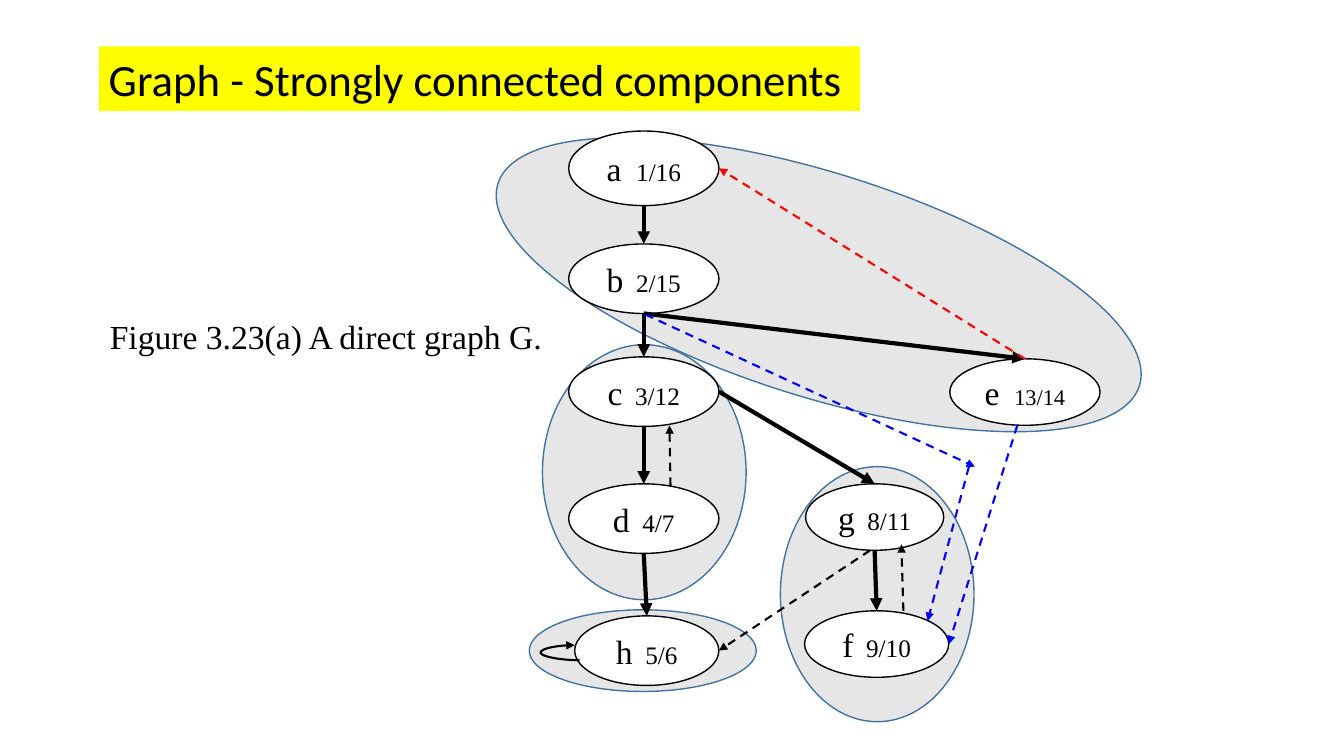
from lxml import etree
from pptx import Presentation
from pptx.dml.color import RGBColor
from pptx.enum.dml import MSO_LINE
from pptx.enum.shapes import MSO_CONNECTOR, MSO_SHAPE
from pptx.enum.text import MSO_ANCHOR, MSO_AUTO_SIZE, PP_ALIGN
from pptx.oxml.ns import qn
from pptx.util import Inches, Pt

BLACK, WHITE, BLUE, RED = "000000", "FFFFFF", "0000FF", "FF0000"
SERIF, SANS = "Times New Roman", "Calibri"


def rgb(value):
    return RGBColor.from_string(value)


class GraphSlide:
    def __init__(self, prs):
        self.s = prs.slides.add_slide(prs.slide_layouts[6])
        self.nodes = {}

    def ellipse(self, box, fill, line, rotation=0):
        sp = self.s.shapes.add_shape(MSO_SHAPE.OVAL, *map(Inches, box))
        sp.shadow.inherit = False
        sp.rotation = rotation
        sp.fill.solid()
        sp.fill.fore_color.rgb = rgb(fill)
        sp.line.color.rgb = rgb(line)
        sp.line.width = Pt(1)
        return sp

    def run(self, p, text, size, font=SERIF):
        r = p.add_run()
        r.text = text
        r.font.size = Pt(size)
        r.font.name = font
        r.font.color.rgb = rgb(BLACK)

    def node(self, name, box, runs):
        tf = self.ellipse(box, WHITE, BLACK).text_frame
        tf.vertical_anchor = MSO_ANCHOR.MIDDLE
        p = tf.paragraphs[0]
        p.alignment = PP_ALIGN.CENTER
        for text, size in runs:
            self.run(p, text, size)
        x, y, w, h = box
        self.nodes[name] = {"top": (x + w / 2, y), "bottom": (x + w / 2, y + h),
                            "right": (x + w, y + h / 2)}

    def arrow(self, start, end, color=BLACK, width=1.5, dashed=True, bend=None):
        kind = MSO_CONNECTOR.STRAIGHT if bend is None else MSO_CONNECTOR.CURVE
        c = self.s.shapes.add_connector(kind, *map(Inches, start + end))
        c.line.color.rgb = rgb(color)
        c.line.width = Pt(width)
        if dashed:
            c.line.dash_style = MSO_LINE.DASH
        spPr = c._element.spPr
        etree.SubElement(spPr.find(qn("a:ln")), qn("a:tailEnd"), type="triangle")
        etree.SubElement(spPr, qn("a:effectLst"))
        if bend is not None:
            guides = spPr.find(qn("a:prstGeom")).get_or_add_avLst()
            etree.SubElement(guides, qn("a:gd"), name="adj1", fmla=f"val {bend}")

    def text(self, box, text, size, font, fill=None, wrap=True, anchor=MSO_ANCHOR.TOP):
        sp = self.s.shapes.add_textbox(*map(Inches, box))
        if fill:
            sp.fill.solid()
            sp.fill.fore_color.rgb = rgb(fill)
        tf = sp.text_frame
        tf.word_wrap = wrap
        tf.auto_size = MSO_AUTO_SIZE.SHAPE_TO_FIT_TEXT
        tf.vertical_anchor = anchor
        self.run(tf.paragraphs[0], text, size, font)


def main():
    prs = Presentation()
    prs.slide_width, prs.slide_height = Inches(13.33), Inches(7.5)
    g = GraphSlide(prs)

    # Strongly connected components
    for box, rotation in [((5.38, 3.42, 2.02, 2.53), 0), ((5.25, 6.05, 2.25, 0.81), 0),
                          ((7.01, -0.51, 2.22, 6.67), 287.5), ((7.74, 4.63, 1.92, 2.53), 0)]:
        g.ellipse(box, "E7E6E6", "43739E", rotation)

    # Vertices with discovery/finish times
    g.node("a", (5.64, 1.3, 1.49, 0.74), [("a ", 24), (" 1/16", 18)])
    for name, times, box in [
        ("b", "2/15", (5.64, 2.42, 1.49, 0.69)),
        ("c", "3/12", (5.64, 3.54, 1.49, 0.69)),
        ("d", "4/7", (5.64, 4.8, 1.49, 0.69)),
        ("h", "5/6", (5.7, 6.11, 1.43, 0.69)),
        ("g", "8/11", (7.99, 4.8, 1.37, 0.66)),
        ("f", "9/10", (7.98, 6.06, 1.43, 0.66)),
    ]:
        g.node(name, box, [(name, 24), (f"  {times}", 18)])
    g.node("e", (9.42, 3.56, 1.49, 0.66), [("e ", 24), (" ", 18), ("13/14", 16)])

    # Tree edges
    for source, side, target in [("a", "bottom", "b"), ("b", "bottom", "c"),
                                 ("c", "bottom", "d"), ("d", "bottom", "h"),
                                 ("b", "bottom", "e"), ("c", "right", "g"),
                                 ("g", "bottom", "f")]:
        g.arrow(g.nodes[source][side], g.nodes[target]["top"], width=3, dashed=False)

    # Self loop on h
    g.arrow((5.75, 6.55), (5.7, 6.4), dashed=False, bend=776100)

    # Back, forward and cross edges
    for start, end, color in [
        ((8.63, 5.46), g.nodes["h"]["right"], BLACK),
        ((6.65, 4.82), (6.64, 4.22), BLACK),
        ((10.09, 4.22), g.nodes["f"]["right"], BLUE),
        ((6.4, 3.12), (9.67, 4.63), BLUE),
        (g.nodes["e"]["top"], g.nodes["a"]["right"], RED),
        ((9.61, 4.63), (9.2, 6.16), BLUE),
        ((8.96, 6.06), (8.94, 5.4), BLACK),
    ]:
        g.arrow(start, end, color)

    # Caption and title
    g.text((0.99, 3.08, 5.41, 0.5), "Figure 3.23(a) A direct graph G.", 24, SERIF,
           anchor=MSO_ANCHOR.MIDDLE)
    g.text((0.98, 0.46, 7.55, 0.64), "Graph - Strongly connected components", 32, SANS,
           fill="FFFF00", wrap=False)

    prs.save("out.pptx")


if __name__ == "__main__":
    main()
